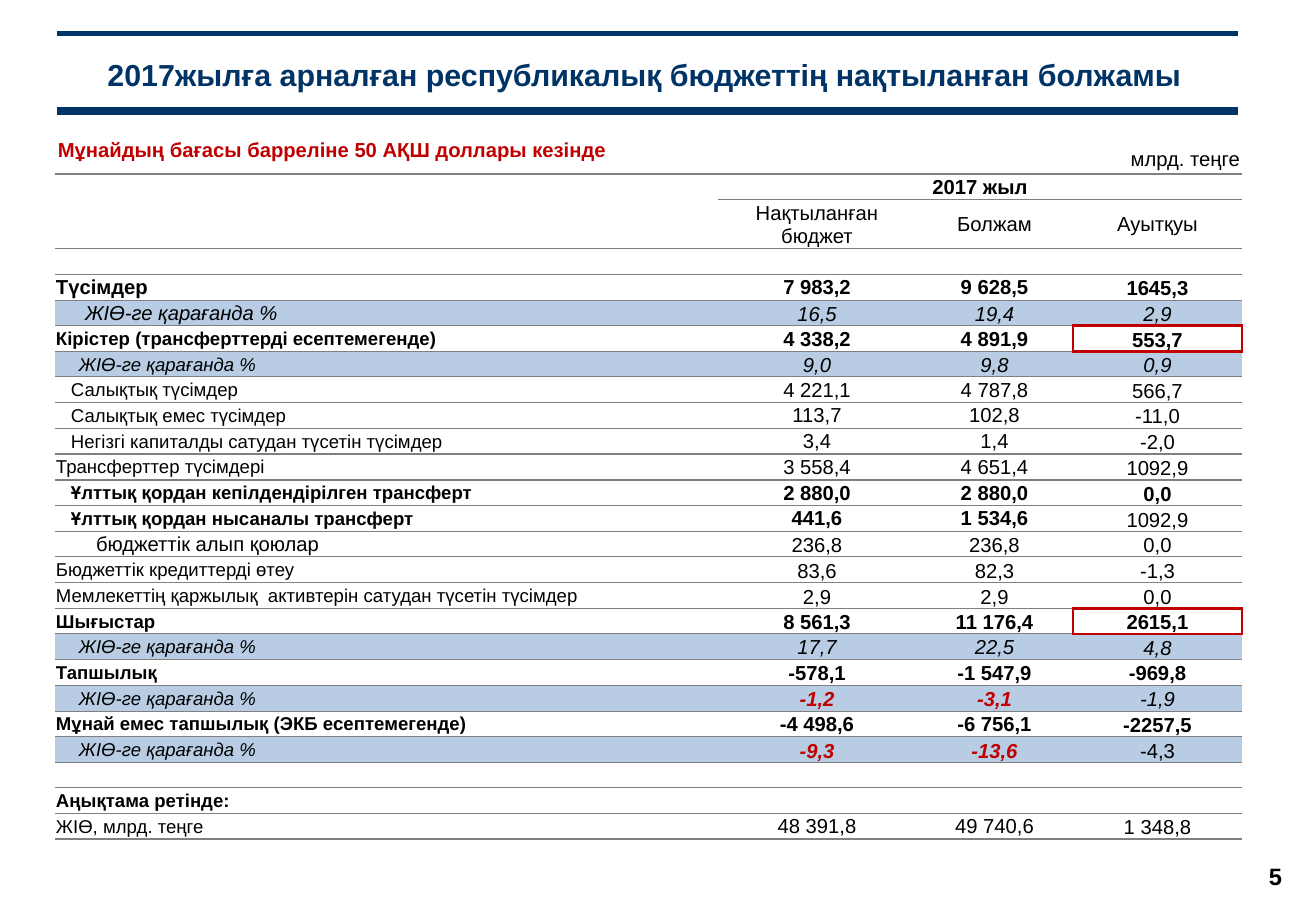
import pptx
import pptx.util
import pptx.dml.color
import pptx.enum.shapes
import pptx.enum.text
import lxml.etree

PX = 914400 / 121.5
COLORS = {"navy": "003366", "red": "C00000", "black": "000000",
          "gray": "808080", "band": "B8CCE4", "white": "FFFFFF"}
NS = "{http://schemas.openxmlformats.org/drawingml/2006/main}"
ALIGN = pptx.enum.text.PP_ALIGN
ANCHOR = pptx.enum.text.MSO_ANCHOR


def px(*lengths):
    return [pptx.util.Emu(round(n * PX)) for n in lengths]


def write(tf, text, align, color="black", size=12, **font):
    """Fill a text frame, one paragraph for each line, in a single format."""
    tf.text = text
    formats = {"name": "Arial", "size": pptx.util.Pt(size),
               "bold": False, "italic": False, **font}
    for p in tf.paragraphs:
        p.alignment = align
        for r in p.runs:
            for name, value in formats.items():
                setattr(r.font, name, value)
            r.font.color.rgb = pptx.dml.color.RGBColor.from_string(COLORS[color])
        if not p.runs:
            lxml.etree.SubElement(p._p, NS + "endParaRPr", sz=str(size * 100))


prs = pptx.Presentation()
prs.slide_width, prs.slide_height = px(1316, 911)
s = prs.slides.add_slide(prs.slide_layouts[5])

# Title between two rules
for y, width in [(111, 4.5), (34, 3)]:
    line = s.shapes.add_connector(pptx.enum.shapes.MSO_CONNECTOR.STRAIGHT,
                                  *px(1238, y, 57, y))
    line.line.width = pptx.util.Pt(width)
    line.line.color.rgb = pptx.dml.color.RGBColor.from_string(COLORS["navy"])
    lxml.etree.SubElement(line._element.spPr, NS + "effectLst")

title = s.shapes.title
title.left, title.top, title.width, title.height = px(56, 37, 1177, 74)
title.text_frame.vertical_anchor = ANCHOR.MIDDLE
write(title.text_frame, "2017жылға арналған республикалық бюджеттің нақтыланған болжамы",
      ALIGN.CENTER, "navy", 18, bold=True)

# Page number
number = s.shapes.add_shape(pptx.enum.shapes.MSO_SHAPE.RECTANGLE, *px(1236, 843, 79, 67))
number.shadow.inherit = False
number.fill.solid()
number.fill.fore_color.rgb = pptx.dml.color.RGBColor.from_string(COLORS["white"])
number.line.fill.background()
number.text_frame.vertical_anchor = ANCHOR.MIDDLE
write(number.text_frame, "5", ALIGN.CENTER, size=14, bold=True)

# Captions above the table
captions = [
    ((1117, 140, 135, 36), "млрд. теңге", False, ALIGN.RIGHT, "black", False),
    ((46, 131, 674, 36), "Мұнайдың бағасы барреліне 50 АҚШ доллары кезінде",
     True, ALIGN.LEFT, "red", True),
]
for box, text, wrap, align, color, bold in captions:
    tf = s.shapes.add_textbox(*px(*box)).text_frame
    tf.word_wrap = wrap
    write(tf, text, align, color, bold=bold)

# Budget table: label, indent, label size, row style, values
SHARE = "ЖІӨ-ге қарағанда %"
EMPTY = ["", "", ""]
rows = [
    ("", 1, 12, "bold", ["2017 жыл", "", ""]),
    ("", 1, 12, "plain", ["Нақтыланған\nбюджет", "Болжам", "Ауытқуы"]),
    ("", 1, 12, "plain", EMPTY),
    ("Түсімдер", 1, 12, "bold", ["7 983,2", "9 628,5", "1645,3"]),
    (SHARE, 30, 12, "share", ["16,5", "19,4", "2,9"]),
    ("Кірістер (трансферттерді есептемегенде)", 1, 11, "bold", ["4 338,2", "4 891,9", "553,7"]),
    (SHARE, 24, 11, "share", ["9,0", "9,8", "0,9"]),
    ("Салықтық түсімдер", 16, 11, "plain", ["4 221,1", "4 787,8", "566,7"]),
    ("Салықтық емес түсімдер", 16, 11, "plain", ["113,7", "102,8", "-11,0"]),
    ("Негізгі капиталды сатудан түсетін түсімдер", 16, 11, "plain", ["3,4", "1,4", "-2,0"]),
    ("Трансферттер түсімдері", 1, 11, "plain", ["3 558,4", "4 651,4", "1092,9"]),
    ("Ұлттық қордан кепілдендірілген трансферт", 16, 11, "bold", ["2 880,0", "2 880,0", "0,0"]),
    ("Ұлттық қордан нысаналы трансферт", 16, 11, "bold", ["441,6", "1 534,6", "1092,9"]),
    ("бюджеттік алып қоюлар", 41, 12, "plain", ["236,8", "236,8", "0,0"]),
    ("Бюджеттік кредиттерді өтеу", 1, 11, "plain", ["83,6", "82,3", "-1,3"]),
    ("Мемлекеттің қаржылық  активтерін сатудан түсетін түсімдер", 1, 11, "plain",
     ["2,9", "2,9", "0,0"]),
    ("Шығыстар", 1, 11, "bold", ["8 561,3", "11 176,4", "2615,1"]),
    (SHARE, 24, 11, "share", ["17,7", "22,5", "4,8"]),
    ("Тапшылық", 1, 11, "bold", ["-578,1", "-1 547,9", "-969,8"]),
    (SHARE, 24, 11, "share", ["-1,2", "-3,1", "-1,9"]),
    ("Мұнай емес тапшылық (ЭКБ есептемегенде)", 1, 11, "bold",
     ["-4 498,6", "-6 756,1", "-2257,5"]),
    (SHARE, 24, 11, "share", ["-9,3", "-13,6", "-4,3"]),
    ("", 1, 12, "plain", EMPTY),
    ("Аңықтама ретінде:", 1, 11, "bold", EMPTY),
    ("ЖІӨ, млрд. теңге", 1, 11, "plain", ["48 391,8", "49 740,6", "1 348,8"]),
]
styles = {"bold": {"bold": True}, "plain": {}, "share": {"italic": True}}
deficit = {"color": "red", "bold": True}
exceptions = {(12, 3): {"bold": False}, (21, 3): {"italic": False},
              (19, 1): deficit, (19, 2): deficit, (21, 1): deficit, (21, 2): deficit}
low_rows = {4, 6, 13, 14, 15, 16, 19, 21}
framed = {(5, 3), (16, 3)}
sides = {"lnL": (0, -1), "lnR": (0, 1), "lnT": (-1, 0), "lnB": (1, 0)}

table = s.shapes.add_table(len(rows), 4, *px(55, 174, 1187, 661)).table
table.first_row = table.horz_banding = False
for column, width in zip(table.columns, px(663, 198, 157, 169)):
    column.width = width
edges = [0, 25, 74] + [99 + round(i * 486 / 19) for i in range(20)] + [610, 636, 661]
for row, top, bottom in zip(table.rows, edges, edges[1:]):
    row.height = px(bottom - top)[0]

for i, (label, indent, size, style, values) in enumerate(rows):
    for j, text in enumerate([label] + values):
        cell = table.cell(i, j)
        margins = px(1 if j else indent, 1, 1, 0)
        for name, value in zip(["left", "top", "right", "bottom"], margins):
            setattr(cell, "margin_" + name, value)
        low = i > 2 and (j == 3 or j > 0 and i in low_rows)
        cell.vertical_anchor = ANCHOR.BOTTOM if low else ANCHOR.MIDDLE
        font = {"size": 12 if j else size, **styles[style], **exceptions.get((i, j), {})}
        write(cell.text_frame, text, ALIGN.CENTER if j else ALIGN.LEFT, **font)

        tcPr = cell._tc.get_or_add_tcPr()
        for tag, (down, right) in sides.items():
            red = (i, j) in framed or (i + down, j + right) in framed
            ln = lxml.etree.SubElement(tcPr, NS + tag, w="19050" if red else "9525")
            if red or (down and (i, j, tag) != (1, 0, "lnT")):
                fill = lxml.etree.SubElement(ln, NS + "solidFill")
                lxml.etree.SubElement(fill, NS + "srgbClr",
                                      val=COLORS["red" if red else "gray"])
            else:
                lxml.etree.SubElement(ln, NS + "noFill")
        if style == "share":
            cell.fill.solid()
            cell.fill.fore_color.rgb = pptx.dml.color.RGBColor.from_string(COLORS["band"])
        else:
            cell.fill.background()

table.cell(0, 0).merge(table.cell(1, 0))
table.cell(0, 1).merge(table.cell(0, 3))

prs.save("out.pptx")
